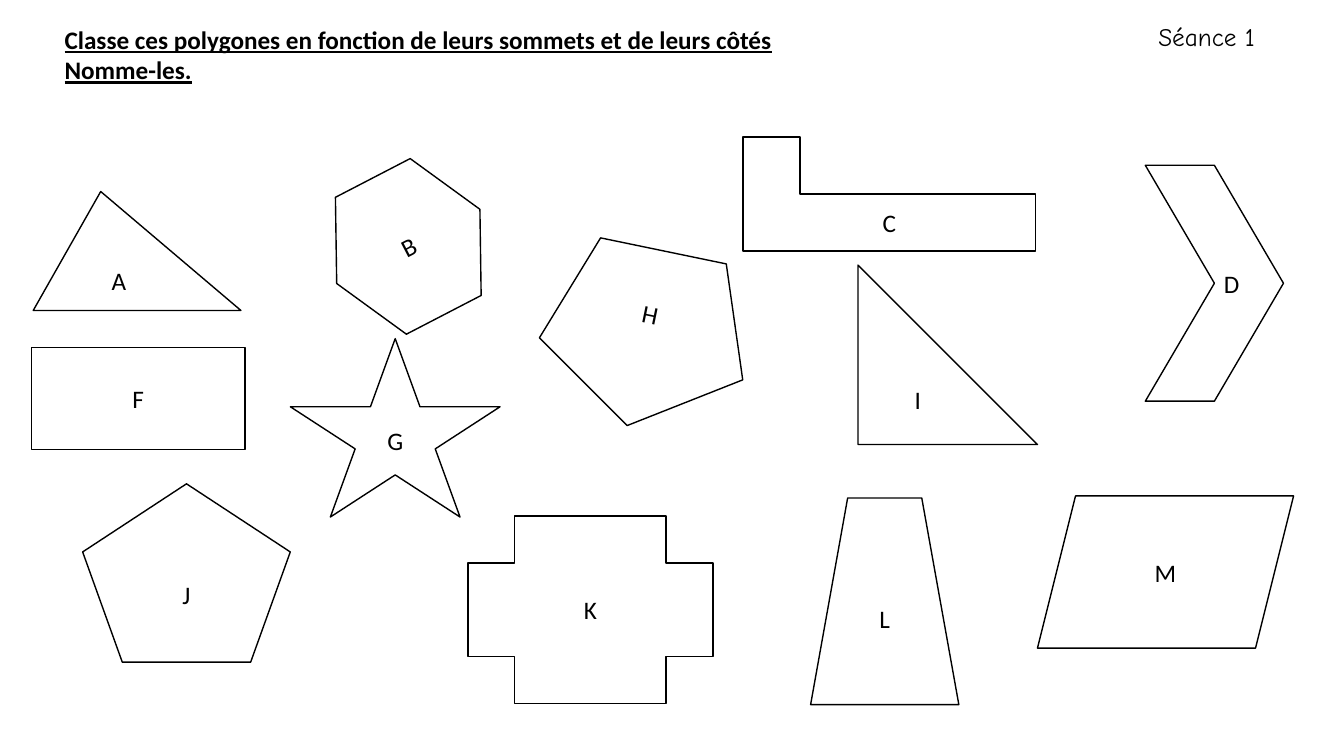
from pptx import Presentation
from pptx.dml.color import RGBColor
from pptx.enum.shapes import MSO_SHAPE as Kind
from pptx.enum.text import MSO_ANCHOR as Anchor, MSO_AUTO_SIZE as Fit, PP_ALIGN as Align
from pptx.oxml.ns import qn
from pptx.util import Inches, Pt

# Content
TITLE = ["Classe ces polygones en fonction de leurs sommets et de leurs côtés",
         "Nomme-les."]
LESSON = "Séance 1"
INK, PAPER = "000000", "FFFFFF"

# Letter, outline, (left, top, width, height), rotation
POLYGONS = [
    ("A", Kind.ISOSCELES_TRIANGLE, (0.33, 1.9, 2.06, 1.18), 0),
    ("F", Kind.RECTANGLE, (0.31, 3.45, 2.12, 1.01), 0),
    ("G", Kind.STAR_5_POINT, (2.88, 3.36, 2.08, 1.77), 0),
    ("J", Kind.REGULAR_PENTAGON, (0.82, 4.8, 2.06, 1.77), 0),
    ("K", Kind.CROSS, (4.64, 5.12, 2.43, 1.86), 0),
    ("I", Kind.RIGHT_TRIANGLE, (8.51, 2.63, 1.78, 1.78), 0),
    ("L", Kind.TRAPEZOID, (8.04, 4.94, 1.47, 2.05), 0),
    ("M", Kind.PARALLELOGRAM, (10.29, 4.92, 2.54, 1.51), 0),
    ("B", Kind.HEXAGON, (3.25, 1.68, 1.6, 1.53), 332.6),
    ("C", Kind.RECTANGLE, (7.37, 1.36, 2.9, 1.13), 0),
    ("D", Kind.CHEVRON, (11.36, 1.64, 1.37, 2.34), 0),
    ("H", Kind.REGULAR_PENTAGON, (5.37, 2.47, 2.06, 1.77), 191.7),
]
PRESET = {"C": "corner"}    # L-shaped outline, which Kind does not list
APEX = {"A": 0.325}    # where the top corner sits along the width
INSET = {"D": 0.44}    # moves the letter into the arrow's body


def color(code):
    return RGBColor.from_string(code)


def write(shape, lines, font="Calibri", bold=False, under=False,
          align=Align.LEFT, anchor=Anchor.TOP, wrap=False, fit=Fit.SHAPE_TO_FIT_TEXT):
    frame = shape.text_frame
    frame.text = "\n".join(lines)
    frame.auto_size, frame.word_wrap = fit, wrap
    frame.vertical_anchor = anchor
    for para in frame.paragraphs:
        para.alignment = align
        face = para.runs[0].font
        face.name, face.size = font, Pt(18)
        face.bold, face.underline = bold, under
        face.color.rgb = color(INK)


deck = Presentation()
deck.slide_width, deck.slide_height = Inches(13.33), Inches(7.5)
slide = deck.slides.add_slide(deck.slide_layouts[5])

# Heading and lesson number
title = slide.shapes.title
title.left, title.top, title.width, title.height = map(Inches, (0.54, 0.19, 7.27, 0.71))
write(title, TITLE, bold=True, under=True)
lesson = slide.shapes.add_textbox(*map(Inches, (11.39, 0.16, 1.23, 0.4)))
write(lesson, [LESSON], font="Comic Neue")

# Polygons
for letter, kind, box, turn in POLYGONS:
    shape = slide.shapes.add_shape(kind, *map(Inches, box))
    shape.rotation = turn
    shape.shadow.inherit = False
    shape.fill.solid()
    shape.fill.fore_color.rgb = color(PAPER)
    shape.line.color.rgb = color(INK)
    shape.line.width = Pt(1)
    if letter in PRESET:
        shape.element.spPr.find(qn("a:prstGeom")).set("prst", PRESET[letter])
    if letter in APEX:
        shape.adjustments[0] = APEX[letter]
    if letter in INSET:
        shape.text_frame.margin_left = Inches(INSET[letter])
    write(shape, [letter], align=Align.CENTER, anchor=Anchor.MIDDLE,
          wrap=True, fit=Fit.NONE)

deck.save("out.pptx")
